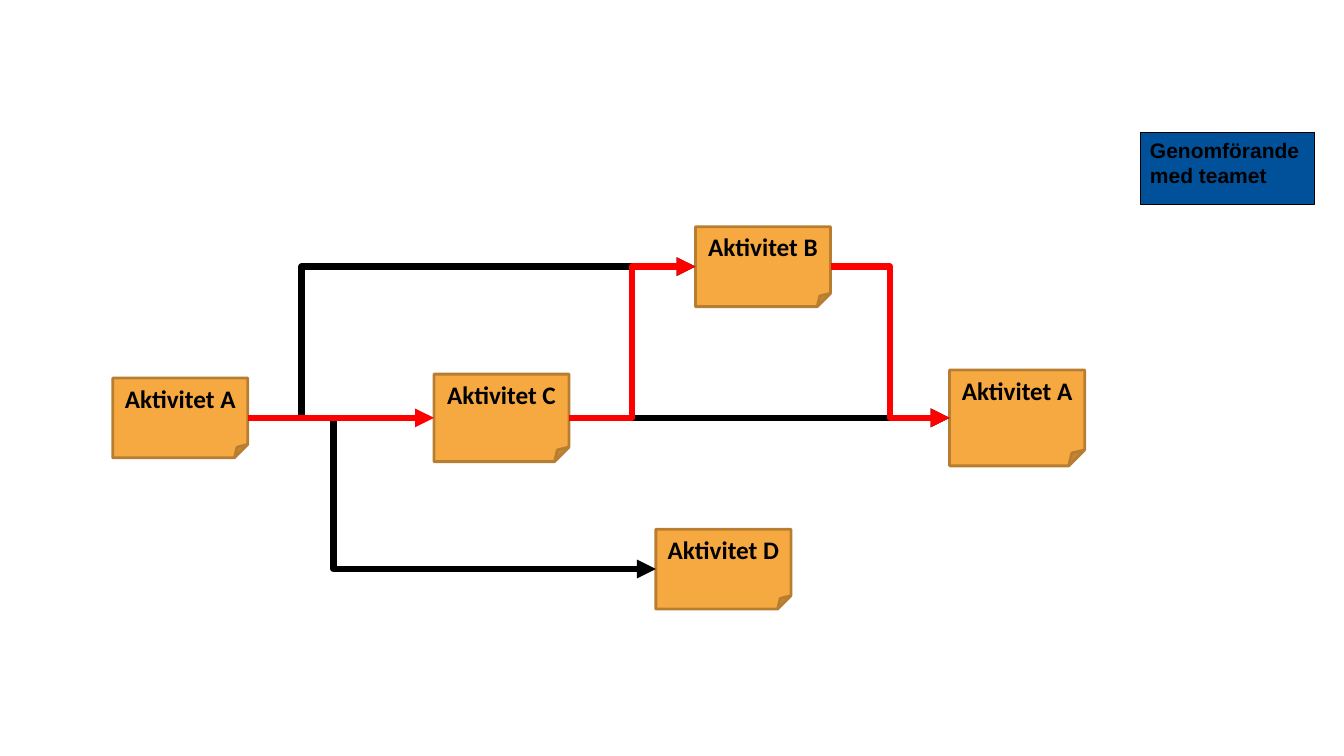
from lxml.etree import SubElement
from pptx import Presentation
from pptx.dml.color import RGBColor
from pptx.enum.shapes import MSO_CONNECTOR as Connector, MSO_SHAPE as Shape
from pptx.enum.text import MSO_ANCHOR as Anchor, PP_ALIGN as Align
from pptx.oxml.ns import qn
from pptx.util import Pt

BLACK = RGBColor(0x00, 0x00, 0x00)
RED = RGBColor(0xFF, 0x00, 0x00)
BLUE = RGBColor(0x00, 0x51, 0x99)
ORANGE = RGBColor(0xF7, 0xA9, 0x41)
BROWN = RGBColor(0xB7, 0x7D, 0x30)

LEFT_SITE, RIGHT_SITE = 1, 3
NOTE_WIDTH = 96.5
ROW_MIDDLES = [190.5 + 108 * row for row in range(3)]


def write_text(shape, text, font="Calibri", size=18, color=BLACK, align=Align.CENTER):
    frame = shape.text_frame
    frame.word_wrap = True
    frame.vertical_anchor = Anchor.TOP
    paragraph = frame.paragraphs[0]
    paragraph.alignment = align
    run = paragraph.add_run()
    run.text = text
    run.font.name = font
    run.font.size = Pt(size)
    run.font.bold = True
    run.font.color.rgb = color


class NetworkSlide:
    """Draws activity notes, a label and dependency arrows on one slide."""

    def __init__(self, slide):
        self.slide = slide

    def box(self, kind, left, top, width, height, fill, line, line_width):
        shape = self.slide.shapes.add_shape(
            kind, Pt(left), Pt(top), Pt(width), Pt(height))
        shape.shadow.inherit = False
        shape.fill.solid()
        shape.fill.fore_color.rgb = fill
        shape.line.color.rgb = line
        shape.line.width = Pt(line_width)
        return shape

    def label(self, text, left, top, width, height):
        shape = self.box(Shape.RECTANGLE, left, top, width, height, BLUE, BLACK, 0.75)
        write_text(shape, text, font="Arial", size=15, align=Align.LEFT)

    def note(self, text, left, row, height=57):
        top = ROW_MIDDLES[row] - height / 2
        shape = self.box(Shape.FOLDED_CORNER, left, top, NOTE_WIDTH, height,
                         ORANGE, BROWN, 2)
        write_text(shape, text)
        return shape

    def arrow(self, source, target, color, bend=0.5):
        connector = self.slide.shapes.add_connector(
            Connector.ELBOW,
            source.left + source.width, source.top + source.height // 2,
            target.left, target.top + target.height // 2)
        connector.begin_connect(source, RIGHT_SITE)
        connector.end_connect(target, LEFT_SITE)
        connector.line.color.rgb = color
        connector.line.width = Pt(4.5)
        properties = connector._element.spPr
        SubElement(properties.find(qn("a:ln")), qn("a:tailEnd"), type="triangle")
        SubElement(properties, qn("a:effectLst"))
        guides = properties.find(qn("a:prstGeom")).get_or_add_avLst()
        SubElement(guides, qn("a:gd"), name="adj1", fmla=f"val {round(bend * 100000)}")


def main():
    presentation = Presentation()
    presentation.slide_width = Pt(960)
    presentation.slide_height = Pt(540)
    network = NetworkSlide(presentation.slides.add_slide(presentation.slide_layouts[6]))

    network.label("Genomförande med teamet", 814.3, 94.8, 124.8, 51)
    activity_b = network.note("Aktivitet B", 496.8, 0)
    start = network.note("Aktivitet A", 80.5, 1)
    activity_d = network.note("Aktivitet D", 468.5, 2)
    activity_c = network.note("Aktivitet C", 310, 1, height=62.5)
    finish = network.note("Aktivitet A", 678.3, 1, height=68.5)

    network.arrow(start, activity_b, BLACK, bend=0.12)
    network.arrow(start, activity_d, BLACK, bend=0.21)
    network.arrow(activity_c, finish, BLACK)
    network.arrow(activity_b, finish, RED)
    network.arrow(start, activity_c, RED)
    network.arrow(activity_c, activity_b, RED)

    presentation.save("out.pptx")


if __name__ == "__main__":
    main()
